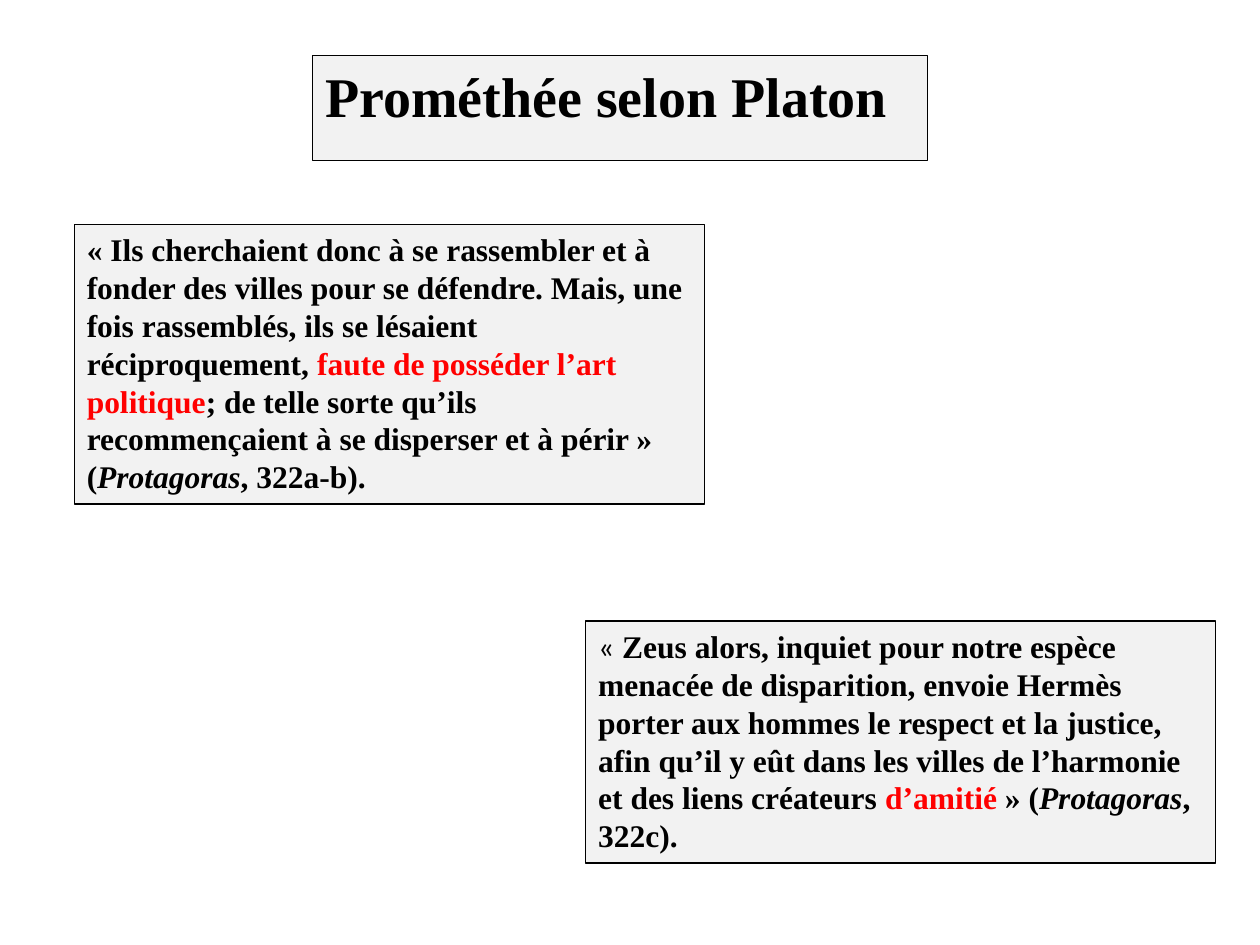
from dataclasses import dataclass

from pptx import Presentation
from pptx.dml.color import RGBColor
from pptx.enum.text import MSO_ANCHOR as Anchor, MSO_AUTO_SIZE as AutoSize, PP_ALIGN as Align
from pptx.util import Cm, Pt


@dataclass(frozen=True)
class Theme:
    font: str = "Times New Roman"
    mark_font: str = "Calibri"
    ink: RGBColor = RGBColor(0x00, 0x00, 0x00)
    accent: RGBColor = RGBColor(0xFF, 0x00, 0x00)
    panel: RGBColor = RGBColor(0xF2, 0xF2, 0xF2)
    title_size: Pt = Pt(32)
    quote_size: Pt = Pt(18)
    border: Pt = Pt(0.75)


class SlideBuilder:
    """Holds the theme and the current slide."""

    def __init__(self, slide, theme):
        self.slide = slide
        self.theme = theme

    def frame(self, shape):
        """Give a shape the grey panel with a thin border."""
        shape.fill.solid()
        shape.fill.fore_color.rgb = self.theme.panel
        shape.line.color.rgb = self.theme.ink
        shape.line.width = self.theme.border
        text_frame = shape.text_frame
        text_frame.word_wrap = True
        text_frame.auto_size = AutoSize.SHAPE_TO_FIT_TEXT
        text_frame.vertical_anchor = Anchor.TOP
        text_frame.paragraphs[0].alignment = Align.LEFT

    def format_run(self, run, size, style=""):
        """Style is empty, or one of accent, italic and mark."""
        font = run.font
        font.name = self.theme.mark_font if style == "mark" else self.theme.font
        font.size = size
        font.bold = style != "mark"
        font.italic = style == "italic"
        font.color.rgb = self.theme.accent if style == "accent" else self.theme.ink

    def title(self, text, left, top, width, height):
        shape = self.slide.shapes.title
        shape.left, shape.top = Cm(left), Cm(top)
        shape.width, shape.height = Cm(width), Cm(height)
        shape.text_frame.text = text
        self.frame(shape)
        self.format_run(shape.text_frame.paragraphs[0].runs[0], self.theme.title_size)

    def quote(self, parts, left, top, width, height):
        """Add a framed quotation made of (text, style) parts."""
        shape = self.slide.shapes.add_textbox(Cm(left), Cm(top), Cm(width), Cm(height))
        self.frame(shape)
        paragraph = shape.text_frame.paragraphs[0]
        for text, style in parts:
            run = paragraph.add_run()
            run.text = text
            self.format_run(run, self.theme.quote_size, style)


CITIES_QUOTE = [
    ("« Ils cherchaient donc à se rassembler et à fonder des villes pour se défendre. "
     "Mais, une fois rassemblés, ils se lésaient réciproquement, ", ""),
    ("faute de posséder l’art politique", "accent"),
    ("; de telle sorte qu’ils recommençaient à se disperser et à périr » (", ""),
    ("Protagoras", "italic"),
    (", 322a-b).", ""),
]
ZEUS_QUOTE = [
    ("«", "mark"),
    (" Zeus alors, inquiet pour notre espèce menacée de disparition, envoie Hermès "
     "porter aux hommes le respect et la justice, afin qu’il y eût dans les villes "
     "de l’harmonie et des liens créateurs ", ""),
    ("d’amitié", "accent"),
    (" » (", ""),
    ("Protagoras", "italic"),
    (", 322c).", ""),
]
QUOTE_WIDTH = 12.7


def main():
    presentation = Presentation()
    presentation.slide_width, presentation.slide_height = Cm(25.4), Cm(19.05)
    title_only = presentation.slide_layouts[5]
    builder = SlideBuilder(presentation.slides.add_slide(title_only), Theme())

    # Heading
    builder.title("Prométhée selon Platon", 6.3, 1.12, 12.4, 1.63)

    # Quotations, stepping down from left to right
    builder.quote(CITIES_QUOTE, 1.5, 4.52, QUOTE_WIDTH, 5.64)
    builder.quote(ZEUS_QUOTE, 11.81, 12.52, QUOTE_WIDTH, 4.88)

    presentation.save("out.pptx")


if __name__ == "__main__":
    main()
